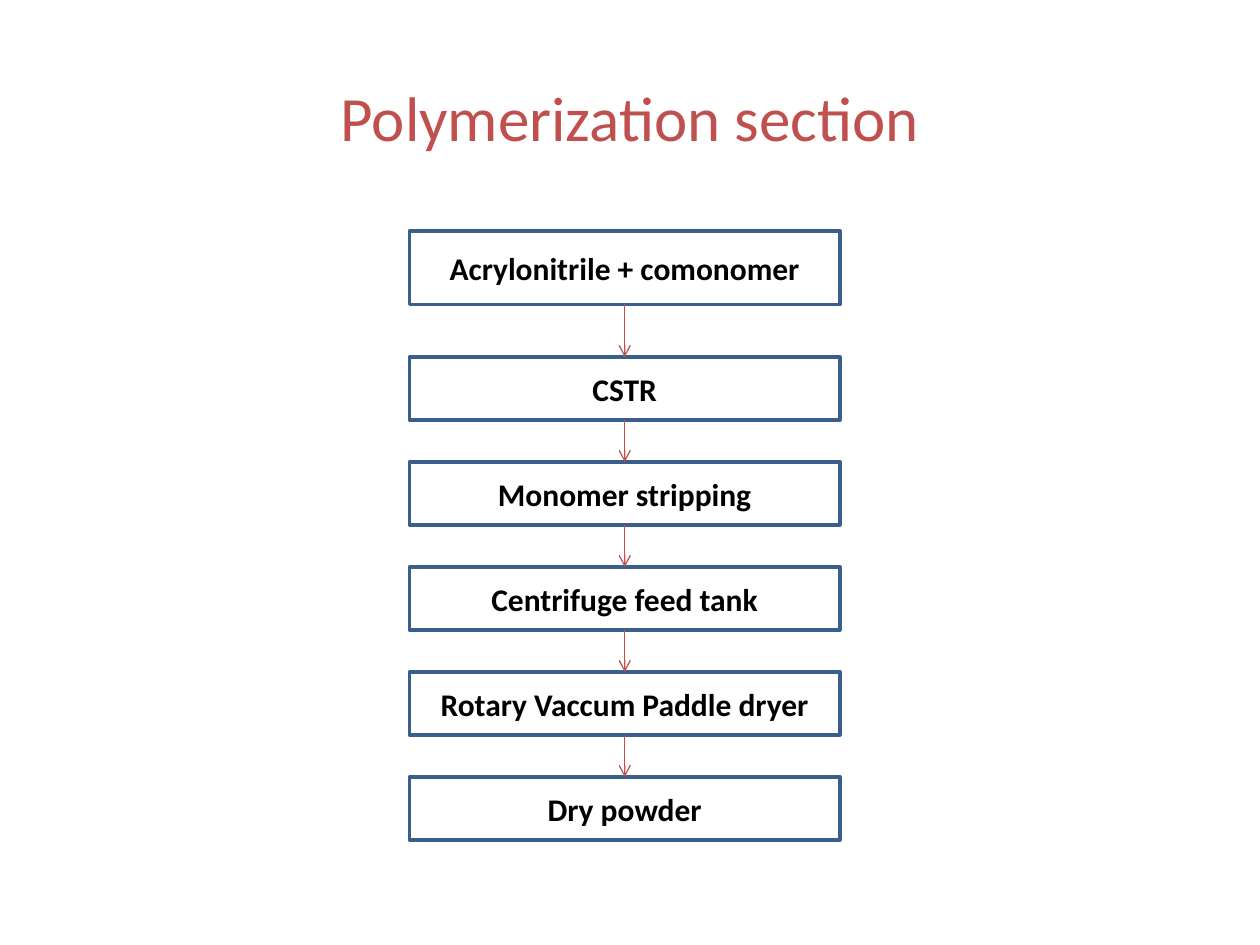
from itertools import pairwise

from lxml.etree import SubElement
from pptx import Presentation
from pptx.dml.color import RGBColor
from pptx.enum.shapes import MSO_CONNECTOR as Connector, MSO_SHAPE as Shape
from pptx.enum.text import MSO_ANCHOR as Anchor, PP_ALIGN as Align
from pptx.oxml.ns import qn
from pptx.util import Inches, Pt

UNIT = Inches(1) // 12
TITLE_BOX = (6, 3.6, 108, 15)
FLOW_BOX = (39, 22, 41, 58)
FIRST_HEIGHT, STEP_HEIGHT, STEP_PITCH = 7, 6, 10
STEPS = [
    "Acrylonitrile + comonomer",
    "CSTR",
    "Monomer stripping",
    "Centrifuge feed tank",
    "Rotary Vaccum Paddle dryer",
    "Dry powder",
]
RED, NAVY, BLACK, WHITE = "C0504D", "3A5F8C", "000000", "FFFFFF"


def paint(color_format, value):
    """Apply a hex colour to a fill, line or font colour."""
    color_format.rgb = RGBColor.from_string(value)


def to_emu(box):
    """Convert a box in grid units of a twelfth of an inch to slide lengths."""
    return [int(length * UNIT) for length in box]


def write(holder, words, size, color, bold=False):
    """Set centred text in a shape and format it."""
    frame = holder.text_frame
    frame.text = words
    frame.word_wrap = True
    frame.vertical_anchor = Anchor.MIDDLE
    line = frame.paragraphs[0]
    line.alignment = Align.CENTER
    font = line.runs[0].font
    font.name, font.size, font.bold = "Calibri", Pt(size), bold
    paint(font.color, color)


def place_title(slide, box, words):
    """Move the title placeholder into its box and fill it."""
    title = slide.shapes.title
    title.left, title.top, title.width, title.height = to_emu(box)
    write(title, words, 36, RED)


def add_step(slide, box, words):
    """Draw one outlined process step."""
    step = slide.shapes.add_shape(Shape.RECTANGLE, *to_emu(box))
    step.shadow.inherit = False
    step.fill.solid()
    paint(step.fill.fore_color, WHITE)
    paint(step.line.color, NAVY)
    step.line.width = Pt(2)
    write(step, words, 18, BLACK, bold=True)
    return step


def add_arrow(slide, upper, lower):
    """Join the bottom of one step to the top of the next."""
    arrow = slide.shapes.add_connector(Connector.STRAIGHT, 0, 0, 0, 0)
    arrow.begin_connect(upper, 2)
    arrow.end_connect(lower, 0)
    paint(arrow.line.color, RED)
    arrow.line.width = Pt(0.75)
    SubElement(arrow.line._get_or_add_ln(), qn("a:tailEnd"), type="arrow")
    SubElement(arrow._element.spPr, qn("a:effectLst"))


def draw_flow(slide, box, names):
    """Stack the steps upward from the foot of the box, the first at its top."""
    left, top, width, height = box
    last_top = top + height - STEP_HEIGHT
    boxes = [(left, top, width, FIRST_HEIGHT)] + [
        (left, last_top - STEP_PITCH * below, width, STEP_HEIGHT)
        for below in reversed(range(len(names) - 1))
    ]
    steps = [add_step(slide, place, name) for place, name in zip(boxes, names)]
    for upper, lower in pairwise(steps):
        add_arrow(slide, upper, lower)


def main():
    """Build and save the slide."""
    deck = Presentation()
    deck.slide_width, deck.slide_height = Inches(10), Inches(7.5)
    slide = deck.slides.add_slide(deck.slide_layouts[5])
    place_title(slide, TITLE_BOX, "Polymerization section")
    draw_flow(slide, FLOW_BOX, STEPS)
    deck.save("out.pptx")


if __name__ == "__main__":
    main()
